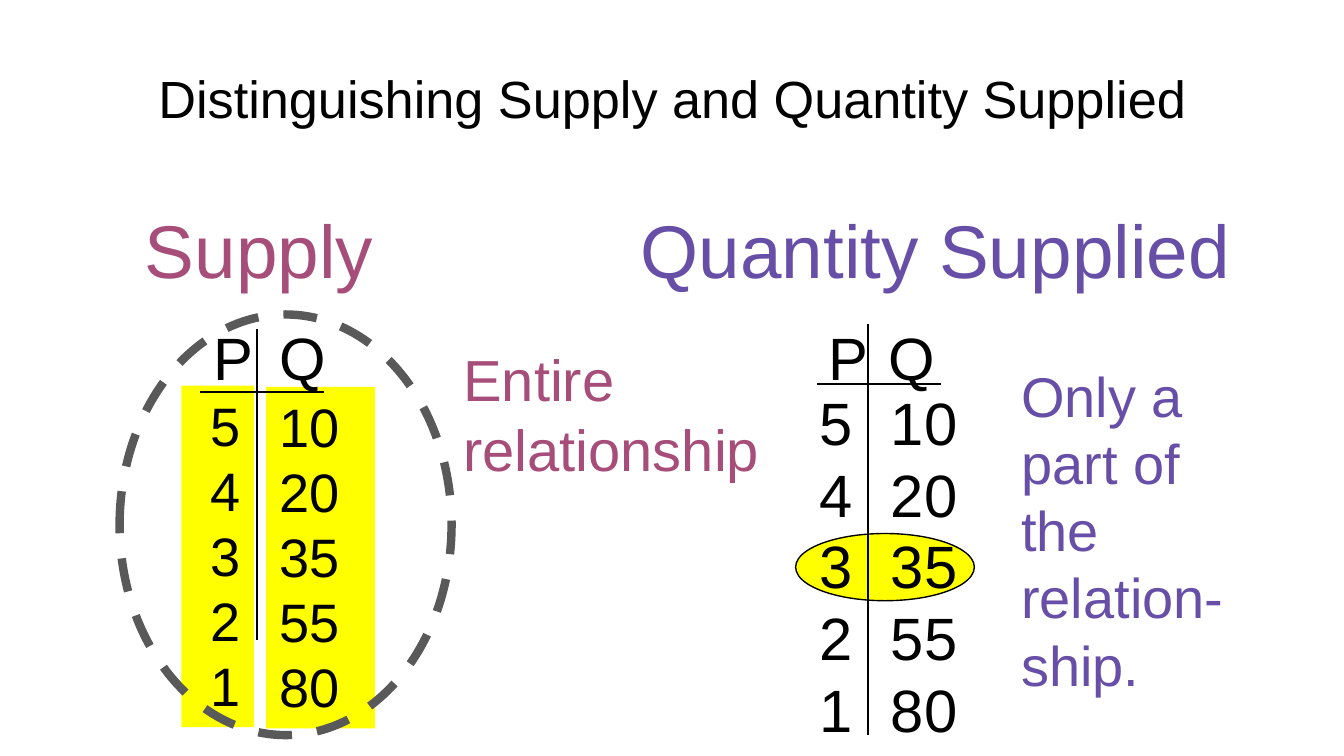
"""Build a slide that contrasts supply with quantity supplied."""

from lxml.etree import SubElement
from pptx import Presentation
from pptx.dml.color import RGBColor
from pptx.enum.dml import MSO_LINE
from pptx.enum.shapes import MSO_CONNECTOR, MSO_SHAPE
from pptx.enum.text import MSO_ANCHOR, PP_ALIGN
from pptx.oxml.ns import qn
from pptx.util import Inches, Pt

BLACK = RGBColor(0, 0, 0)
GRAY = RGBColor(0x59, 0x59, 0x59)
YELLOW = RGBColor(0xFF, 0xFF, 0)
PINK = RGBColor(0xA6, 0x4D, 0x79)
PURPLE = RGBColor(0x67, 0x4E, 0xA7)

TITLE = "Distinguishing Supply and Quantity Supplied"
PRICES = ["5", "4", "3", "2", "1"]
QUANTITIES = ["10", "20", "35", "55", "80"]
LABELS = [
    (["Supply"], (0.98, 1.47, 2.3, 0.77), 40, PINK),
    (["Quantity Supplied"], (4.67, 1.47, 5.14, 0.77), 40, PURPLE),
    (["Entire", "relationship"], (3.35, 2.51, 2.47, 1.14), 31, PINK),
    (["Only a", "part of", "the", "relation-", "ship."], (7.5, 2.64, 1.95, 2.63), 30, PURPLE),
]
SCHEDULES = [
    {"prices": (1.35, 2.87, 0.54, 2.54), "quantities": (1.98, 2.88, 0.81, 2.54),
     "size": 29, "fill": YELLOW, "heads": (1.49, 1.98), "head_height": 0.77,
     "lines": [(1.91, 2.45, 1.91, 4.76), (1.49, 2.92, 2.41, 2.92)]},
    {"prices": (5.9, 2.82, 0.54, 2.79), "quantities": (6.53, 2.82, 0.76, 2.79),
     "size": 32, "fill": None, "heads": (6.07, 6.51), "head_height": 0.51,
     "lines": [(6.46, 2.41, 6.46, 5.47), (6.08, 2.86, 7, 2.86)]},
]


def write(sp, lines, size=32, color=BLACK, align=PP_ALIGN.LEFT, anchor=MSO_ANCHOR.TOP):
    tf = sp.text_frame
    tf.word_wrap = True
    tf.vertical_anchor = anchor
    for i, line in enumerate(lines):
        p = tf.add_paragraph() if i else tf.paragraphs[0]
        p.alignment = align
        p.line_spacing = 1
        r = p.add_run()
        r.text = line
        r.font.name = "Arial"
        r.font.size = Pt(size)
        r.font.color.rgb = color


def add_text(s, lines, box, fill=None, **fmt):
    sp = s.shapes.add_textbox(*map(Inches, box))
    if fill is not None:
        sp.fill.solid()
        sp.fill.fore_color.rgb = fill
    write(sp, lines, **fmt)


def add_ellipse(s, box, line, width, fill=None, dash=None):
    sp = s.shapes.add_shape(MSO_SHAPE.OVAL, *map(Inches, box))
    sp.shadow.inherit = False
    if fill is None:
        sp.fill.background()
    else:
        sp.fill.solid()
        sp.fill.fore_color.rgb = fill
    sp.line.color.rgb = line
    sp.line.width = Pt(width)
    sp.line.dash_style = dash


def add_line(s, ends):
    c = s.shapes.add_connector(MSO_CONNECTOR.STRAIGHT, *map(Inches, ends))
    c.line.color.rgb = BLACK
    c.line.width = Pt(1)
    SubElement(c._element.spPr, qn("a:effectLst"))


def add_schedule(s, schedule):
    size, fill = schedule["size"], schedule["fill"]
    add_text(s, PRICES, schedule["prices"], fill=fill, size=size, align=PP_ALIGN.RIGHT)
    add_text(s, QUANTITIES, schedule["quantities"], fill=fill, size=size)
    for ends in schedule["lines"]:
        add_line(s, ends)
    for head, left in zip("PQ", schedule["heads"]):
        add_text(s, [head], (left, 2.34, 0.46, schedule["head_height"]))


def main():
    prs = Presentation()
    prs.slide_width = Inches(10)
    prs.slide_height = prs.slide_width * 9 // 16
    s = prs.slides.add_slide(prs.slide_layouts[5])
    title = s.shapes.title
    title.left, title.top, title.width, title.height = map(Inches, (0.75, 0.38, 8.5, 0.7))
    write(title, [TITLE], size=28, align=PP_ALIGN.CENTER, anchor=MSO_ANCHOR.MIDDLE)
    add_ellipse(s, (5.92, 3.97, 1.33, 0.5), BLACK, 0.75, fill=YELLOW)
    for lines, box, size, color in LABELS:
        add_text(s, lines, box, size=size, color=color)
    for schedule in SCHEDULES:
        add_schedule(s, schedule)
    add_ellipse(s, (0.89, 2.34, 2.47, 3.13), GRAY, 4.5, dash=MSO_LINE.DASH)
    prs.save("out.pptx")


if __name__ == "__main__":
    main()
